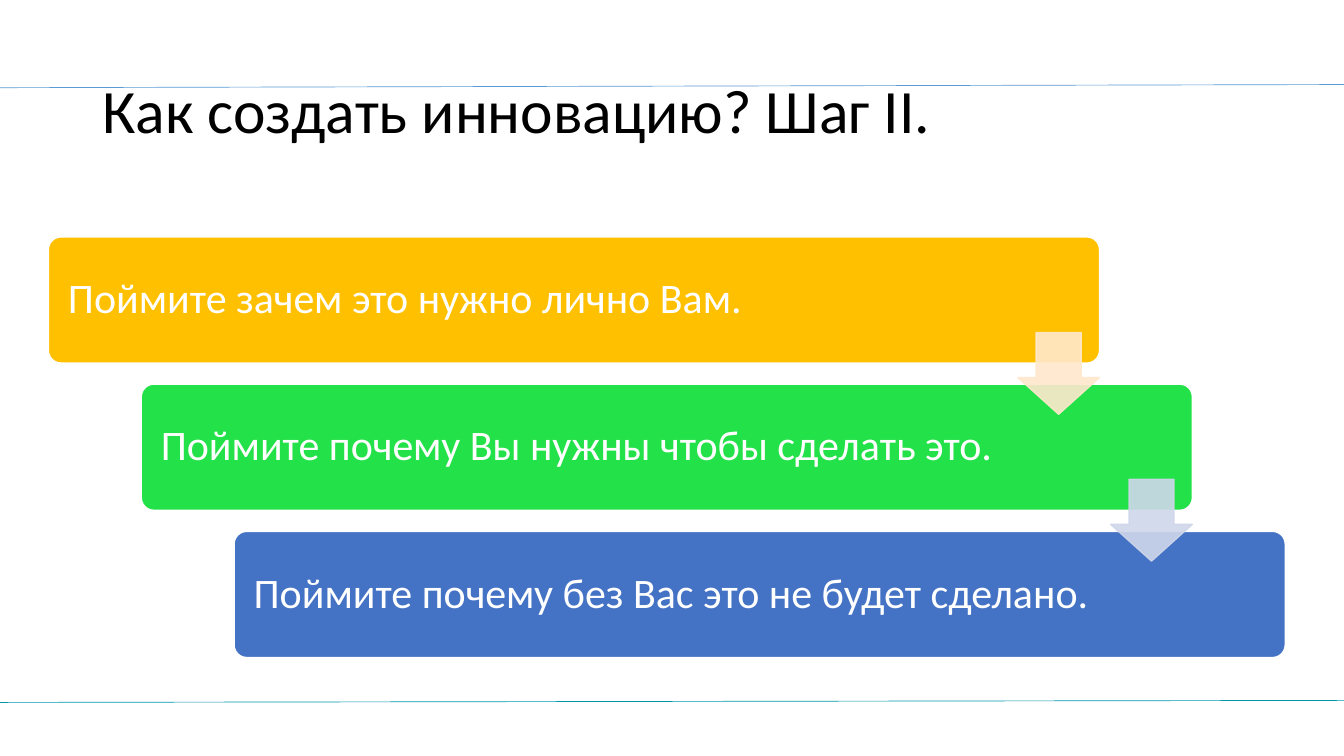
"""Builds the slide with three steps of creating an innovation."""
from pptx import Presentation
from pptx.dml.color import RGBColor
from pptx.enum.shapes import MSO_CONNECTOR, MSO_SHAPE
from pptx.enum.text import MSO_ANCHOR, PP_ALIGN
from pptx.oxml.ns import qn
from pptx.util import Cm, Pt
from lxml.etree import SubElement

COLORS = {
    "white": "FFFFFF", "black": "000000", "sky": "5B9BD5", "teal": "0097A9",
    "gold": "FFC000", "green": "23E148", "blue": "4472C4",
    "cream": "FFE8CC", "mist": "CFD6EA",
}


def rgb(name):
    return RGBColor.from_string(COLORS[name])


def write(shape, text, size, color):
    frame = shape.text_frame
    frame.word_wrap = True
    frame.vertical_anchor = MSO_ANCHOR.MIDDLE
    para = frame.paragraphs[0]
    para.text = text
    para.alignment = PP_ALIGN.LEFT
    para.line_spacing = 0.9
    para.font.name = "Calibri"
    para.font.size = Pt(size)
    para.font.color.rgb = rgb(color)
    return frame


deck = Presentation()
deck.slide_width, deck.slide_height = Cm(33.87), Cm(19.05)
slide = deck.slides.add_slide(deck.slide_layouts[6])
shapes = slide.shapes

for start, end, color in [(2.21, 2.13, "sky"), (17.7, 17.65, "teal")]:
    rule = shapes.add_connector(
        MSO_CONNECTOR.STRAIGHT, Cm(0), Cm(start), Cm(33.87), Cm(end))
    rule.line.color.rgb = rgb(color)
    rule.line.width = Pt(0.48)
    SubElement(rule._element.spPr, qn("a:effectLst"))

title = shapes.add_textbox(Cm(2.33), Cm(1.01), Cm(29.21), Cm(3.68))
write(title, "Как создать инновацию? Шаг II.", 44, "black")

steps = [
    ("Поймите зачем это нужно лично Вам.", "gold"),
    ("Поймите почему Вы нужны чтобы сделать это.", "green"),
    ("Поймите почему без Вас это не будет сделано.", "blue"),
]
for i, (text, color) in enumerate(steps):
    box = shapes.add_shape(
        MSO_SHAPE.ROUNDED_RECTANGLE, Cm(1.22 + 2.34 * i),
        Cm(5.97 + 3.71 * i), Cm(26.49), Cm(3.18))
    box.adjustments[0] = 0.1
    box.shadow.inherit = False
    box.fill.solid()
    box.fill.fore_color.rgb = rgb(color)
    box.line.color.rgb = rgb("white")
    box.line.width = Pt(1)
    frame = write(box, text, 30, "white")
    frame.margin_left = frame.margin_right = Cm(0.4)

for i, color in enumerate(["cream", "mist"]):
    arrow = shapes.add_shape(
        MSO_SHAPE.DOWN_ARROW, Cm(25.65 + 2.34 * i),
        Cm(8.38 + 3.7 * i), Cm(2.06), Cm(2.06))
    arrow.adjustments[0] = 0.55
    arrow.adjustments[1] = 0.45
    arrow.shadow.inherit = False
    arrow.fill.solid()
    arrow.fill.fore_color.rgb = rgb(color)
    arrow.line.color.rgb = rgb(color)
    arrow.line.width = Pt(1)
    for paint in arrow._element.spPr.iter(qn("a:srgbClr")):
        SubElement(paint, qn("a:alpha"), val="90000")

deck.save("out.pptx")
